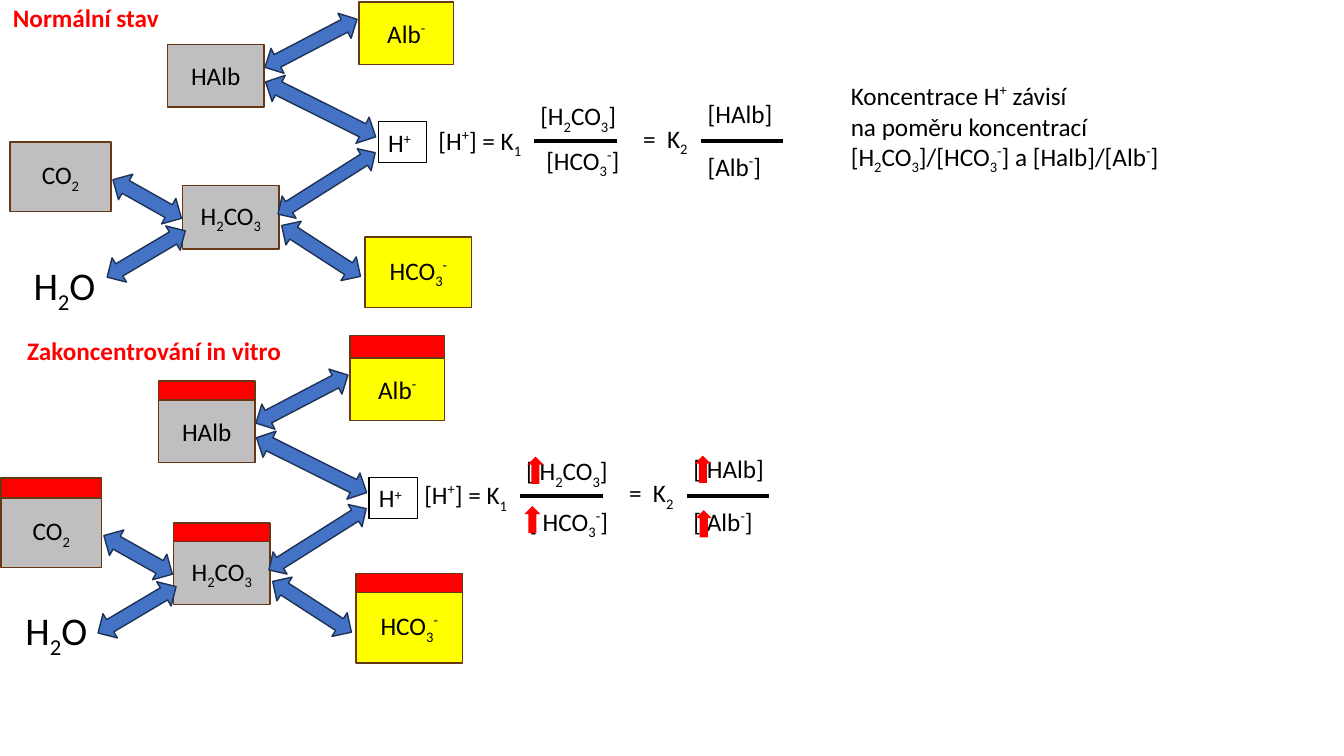
from dataclasses import dataclass
from lxml import etree
from pptx import Presentation
from pptx.dml.color import RGBColor
from pptx.enum.shapes import MSO_CONNECTOR, MSO_SHAPE
from pptx.enum.text import MSO_ANCHOR, MSO_AUTO_SIZE, PP_ALIGN
from pptx.oxml.ns import qn
from pptx.util import Inches, Pt

RECT = MSO_SHAPE.RECTANGLE
BOTH = MSO_SHAPE.LEFT_RIGHT_ARROW
DOWN = MSO_SHAPE.DOWN_ARROW
STRAIGHT = MSO_CONNECTOR.STRAIGHT
LEFT, MID = PP_ALIGN.LEFT, PP_ALIGN.CENTER
TOP, CORE = MSO_ANCHOR.TOP, MSO_ANCHOR.MIDDLE
GROW, FIXED = MSO_AUTO_SIZE.SHAPE_TO_FIT_TEXT, MSO_AUTO_SIZE.NONE


@dataclass
class Theme:
    """Colours, font and type sizes."""
    red: str = "FF0000"
    yellow: str = "FFFF00"
    gray: str = "BFBFBF"
    blue: str = "4472C4"
    navy: str = "1E3256"
    brown: str = "683715"
    black: str = "000000"
    font: str = "Calibri"
    body: int = 18
    large: int = 28


class Board:
    """Draws on a slide with a grid of ten columns and rows to the inch."""

    def __init__(self, slide, theme):
        self.slide, self.theme = slide, theme
        self.dx = self.dy = 0

    def shift(self, dx, dy):
        """Move the grid's origin."""
        self.dx, self.dy = dx, dy

    def place(self, col, row):
        """Turn a grid point into slide lengths."""
        return Inches((col + self.dx) / 10), Inches((row + self.dy) / 10)

    def span(self, wide, high):
        """Turn a grid size into slide lengths."""
        return Inches(wide / 10), Inches(high / 10)

    def shape(self, kind, col, row, wide, high, fill=None, line=None, width=1, turn=0):
        """Add a preset shape."""
        item = self.slide.shapes.add_shape(kind, *self.place(col, row), *self.span(wide, high))
        item.shadow.inherit = False
        item.rotation = turn
        if fill:
            item.fill.solid()
            item.fill.fore_color.rgb = RGBColor.from_string(fill)
        else:
            item.fill.background()
        if line:
            item.line.color.rgb = RGBColor.from_string(line)
            item.line.width = Pt(width)
        else:
            item.line.fill.background()
        return item

    def label(self, item, text, align=LEFT, anchor=TOP, size=None, color=None,
              bold=False, wrap=True, fit=GROW, lift=40):
        """Set text; _ lowers and ^ raises the next letter."""
        frame = item.text_frame
        frame.word_wrap, frame.auto_size, frame.vertical_anchor = wrap, fit, anchor
        for i, line in enumerate(text.split("\n")):
            para = frame.paragraphs[0] if i == 0 else frame.add_paragraph()
            para.alignment = align
            font = para.font
            font.name, font.size, font.bold = self.theme.font, Pt(size or self.theme.body), bold
            font.color.rgb = RGBColor.from_string(color or self.theme.black)
            for part, base in self.pieces(line, lift):
                run = para.add_run()
                run.text = part
                if base:
                    run._r.get_or_add_rPr().set("baseline", str(base * 1000))

    def pieces(self, line, lift):
        """Yield pieces of text with their baseline shift."""
        plain, marks = "", iter(line)
        for char in marks:
            if char in "_^":
                if plain:
                    yield plain, 0
                yield next(marks), -25 if char == "_" else lift
                plain = ""
            else:
                plain += char
        if plain:
            yield plain, 0

    def text(self, text, col, row, wide, high=4, **style):
        """Add a text box."""
        box = self.slide.shapes.add_textbox(*self.place(col, row), *self.span(wide, high))
        self.label(box, text, **style)

    def cell(self, text, col, row, wide, high, fill):
        """Add a filled box with a centred formula."""
        box = self.shape(RECT, col, row, wide, high, fill, self.theme.brown)
        self.label(box, text, MID, CORE, fit=FIXED)

    def bar(self, col, row, wide):
        """Add a fraction bar."""
        rule = self.slide.shapes.add_connector(
            STRAIGHT, *self.place(col, row), *self.place(col + wide, row))
        rule.line.color.rgb = RGBColor.from_string(self.theme.black)
        rule.line.width = Pt(3)
        etree.SubElement(rule._element.spPr, qn("a:effectLst"))


def scheme(board, caps):
    """Draw the buffer scheme, with red caps if asked."""
    look = board.theme
    cells = [
        ("HCO_3^-", 36.2, 23.5, 10.6, 7, look.yellow, 1.9),
        ("Alb^-", 35.6, 0.2, 9.4, 6.2, look.yellow, 2.2),
        ("HAlb", 16.6, 4.4, 9.6, 6.2, look.gray, 1.9),
        ("H_2CO_3", 18.1, 18.4, 9.6, 6.3, look.gray, 1.8),
        ("CO_2", 1, 14.1, 10, 6.9, look.gray, 2),
    ]
    arrows = [
        (10.7, 18.3, 7.8, 2.9, 29.4), (10, 23.8, 9, 2.8, 329.3),
        (27.2, 23.5, 9.3, 2.8, 32.9), (26.7, 16.9, 11.4, 2.6, 327.7),
        (25.7, 9.4, 12.2, 2.9, 26.5), (25.7, 2.9, 10.3, 2.8, 332.4),
    ]
    if caps:
        for _, col, row, wide, _, _, rise in cells:
            board.shape(RECT, col, row - rise, wide, 6.2, look.red, look.brown)
    for *spot, _ in cells:
        board.cell(*spot)
    for *spot, turn in arrows:
        board.shape(BOTH, *spot, look.blue, look.navy, turn=turn)
    ion = board.shape(RECT, 37.5, 12.1, 4.8, 4, line=look.black, width=0.75)
    board.label(ion, "H^+", wrap=False, lift=30)


def water(board, col, row):
    """Add the water label."""
    board.text("H_2O", col, row, 9.6, 6.4, align=MID, anchor=CORE,
               size=board.theme.large, fit=FIXED)


def ratio(board, gap, low):
    """Draw both fractions; gap leaves room for red arrows."""
    more = 0.7 * len(gap)
    board.text(f"[{gap}HCO_3^-]", 50.2, low, 15.2, align=MID)
    for text, col, row, wide in [
        (f"[{gap}H_2CO_3]", 52.6, 9.5, 10.9 + more),
        (f"[{gap}HAlb]", 69.2, 9.3, 8.9 + more),
        (f"[{gap}Alb^-]", 69.2, 14.5, 7.6 + more),
        ("[H^+] = K_1", 42.5, 11.9, 11.7),
        ("=  K_2", 62.8, 11.7, 7.5),
    ]:
        board.text(text, col, row, wide, wrap=False)
    for col in (53, 69.5):
        board.bar(col, 14, 8.2)


def main():
    """Build and save the slide."""
    deck = Presentation()
    deck.slide_width, deck.slide_height = Inches(13.33), Inches(7.5)
    look = Theme()
    board = Board(deck.slides.add_slide(deck.slide_layouts[6]), look)

    scheme(board, False)
    water(board, 1.6, 25.4)
    ratio(board, "", 13.9)
    board.text("Koncentrace H^+ závisí\nna poměru koncentrací\n"
               "[H_2CO_3]/[HCO_3^-] a [Halb]/[Alb^-]", 83.4, 7.5, 37, 10.1)

    board.shift(-0.9, 35.3)
    scheme(board, True)
    board.shift(-1.4, 35.2)
    ratio(board, " ", 14.5)

    board.shift(0, 0)
    water(board, 0.8, 59.6)
    for col, row in [(52.3, 45.3), (52, 50.2), (69, 50.6), (68.9, 45.2)]:
        board.shape(DOWN, col, row, 1.6, 2.7, look.red, turn=180)
    for text, col, row, wide in [
        ("Normální stav", 0.3, -0.3, 21.7),
        ("Zakoncentrování in vitro", 1.7, 32.8, 37.2),
    ]:
        board.text(text, col, row, wide, color=look.red, bold=True)
    deck.save("out.pptx")


if __name__ == "__main__":
    main()
